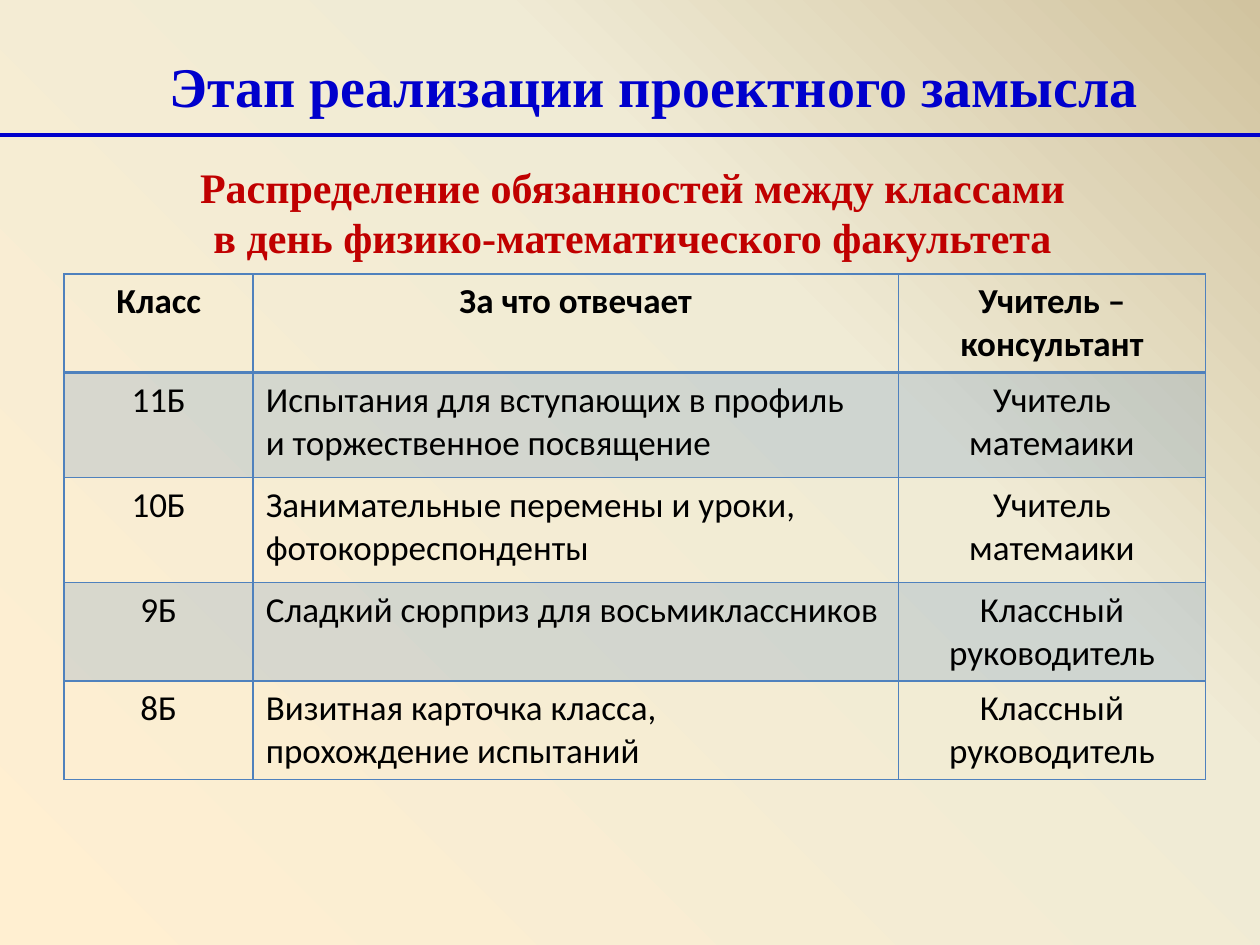
from dataclasses import dataclass

from lxml import etree
from pptx import Presentation
from pptx.dml.color import RGBColor
from pptx.enum.shapes import MSO_CONNECTOR
from pptx.enum.text import MSO_ANCHOR, MSO_AUTO_SIZE, PP_ALIGN
from pptx.oxml import parse_xml
from pptx.oxml.ns import nsdecls, qn
from pptx.util import Pt

CENTER, LEFT = PP_ALIGN.CENTER, PP_ALIGN.LEFT
STRAIGHT = MSO_CONNECTOR.STRAIGHT
TOP = MSO_ANCHOR.TOP
FIXED, GROW = MSO_AUTO_SIZE.NONE, MSO_AUTO_SIZE.SHAPE_TO_FIT_TEXT
TITLE_ONLY = 5


@dataclass(frozen=True)
class Theme:
    title: str = "0000CC"
    subtitle: str = "C00000"
    text: str = "000000"
    grid: str = "4F81BD"
    band_opacity: int = 20
    backdrop: tuple = ((0, "FFEFD1"), (65, "F0EBD5"), (100, "D1C39F"))
    heading_font: str = "Times New Roman"
    table_font: str = "Calibri"
    title_size: int = 32
    subtitle_size: int = 24
    table_size: int = 20


THEME = Theme()

TITLE = "Этап реализации проектного замысла"
SUBTITLE = ("Распределение обязанностей между классами",
            "в день физико-математического факультета")
DUTIES = (
    ("Класс", "За что отвечает", "Учитель –\nконсультант"),
    ("11Б", "Испытания для вступающих в профиль\nи торжественное посвящение",
     "Учитель матемаики"),
    ("10Б", "Занимательные перемены и уроки,\nфотокорреспонденты",
     "Учитель матемаики"),
    ("9Б", "Сладкий сюрприз для восьмиклассников", "Классный руководитель"),
    ("8Б", "Визитная карточка класса,\nпрохождение испытаний",
     "Классный руководитель"),
)
COLUMN_WIDTHS = (108, 368.6, 175.7)
ROW_HEIGHTS = (56, 60, 60, 56, 56)


def paint_backdrop(page):
    """Radial gradient that spreads from the bottom left corner."""
    stops = "".join(
        f'<a:gs pos="{position * 1000}"><a:srgbClr val="{color}"/></a:gs>'
        for position, color in THEME.backdrop)
    page.element.cSld.insert(0, parse_xml(
        f'<p:bg {nsdecls("p", "a")}><p:bgPr><a:gradFill rotWithShape="1">'
        f'<a:gsLst>{stops}</a:gsLst><a:path path="circle">'
        '<a:fillToRect t="100000" r="100000"/></a:path></a:gradFill>'
        '<a:effectLst/></p:bgPr></p:bg>'))


def write_text(frame, lines, align, color, **font_format):
    frame.text = "\n".join(lines)
    for para in frame.paragraphs:
        para.alignment = align
        for span in para.runs:
            span.font.color.rgb = RGBColor.from_string(color)
            for name, value in font_format.items():
                setattr(span.font, name, value)


def format_frame(frame, **frame_format):
    for name, value in frame_format.items():
        setattr(frame, name, value)


def place_title(page):
    box = page.shapes.title
    box.left, box.top, box.width, box.height = Pt(28), Pt(26), Pt(692), Pt(124)
    format_frame(box.text_frame, vertical_anchor=TOP, auto_size=FIXED, word_wrap=True)
    write_text(box.text_frame, [TITLE], CENTER, THEME.title, bold=True,
               name=THEME.heading_font, size=Pt(THEME.title_size))


def add_subtitle(page):
    box = page.shapes.add_textbox(Pt(101.5), Pt(88.5), Pt(520), Pt(65.5))
    format_frame(box.text_frame, auto_size=GROW, word_wrap=False)
    write_text(box.text_frame, SUBTITLE, CENTER, THEME.subtitle, bold=True,
               name=THEME.heading_font, size=Pt(THEME.subtitle_size))


def add_rule(page, y, width):
    rule = page.shapes.add_connector(STRAIGHT, 0, y, width, y)
    rule.line.color.rgb = RGBColor.from_string(THEME.title)
    rule.line.width = Pt(2.25)
    etree.SubElement(rule._element.spPr, qn("a:effectLst"))


def set_borders(cell, **widths):
    properties = cell._tc.get_or_add_tcPr()
    for side in "LRTB":
        properties.append(parse_xml(
            f'<a:ln{side} {nsdecls("a")} w="{Pt(widths.get(side, 1))}">'
            f'<a:solidFill><a:srgbClr val="{THEME.grid}"/></a:solidFill></a:ln{side}>'))


def fill_cell(cell, banded):
    if not banded:
        cell.fill.background()
        return
    cell.fill.solid()
    cell.fill.fore_color.rgb = RGBColor.from_string(THEME.grid)
    color = cell._tc.tcPr.find(f"{qn('a:solidFill')}/{qn('a:srgbClr')}")
    etree.SubElement(color, qn("a:alpha"), val=str(THEME.band_opacity * 1000))


def add_duties_table(page):
    table = page.shapes.add_table(
        len(DUTIES), len(COLUMN_WIDTHS), Pt(36.7), Pt(156.7),
        Pt(sum(COLUMN_WIDTHS)), Pt(sum(ROW_HEIGHTS))).table
    table.horz_banding = False
    for column, width in zip(table.columns, COLUMN_WIDTHS):
        column.width = Pt(width)
    for row, height in zip(table.rows, ROW_HEIGHTS):
        row.height = Pt(height)

    for row_index, texts in enumerate(DUTIES):
        header = row_index == 0
        # The line under the header is thicker than the rest of the grid
        heavy = {0: {"B": 2}, 1: {"T": 2}}.get(row_index, {})
        for column_index, text in enumerate(texts):
            cell = table.cell(row_index, column_index)
            align = LEFT if column_index == 1 and not header else CENTER
            write_text(cell.text_frame, text.split("\n"), align, THEME.text,
                       bold=header, name=THEME.table_font, size=Pt(THEME.table_size))
            set_borders(cell, **heavy)
            fill_cell(cell, banded=row_index % 2 == 1)


def main():
    deck = Presentation()
    deck.slide_width, deck.slide_height = Pt(720), Pt(540)
    page = deck.slides.add_slide(deck.slide_layouts[TITLE_ONLY])

    # Backdrop
    paint_backdrop(page)
    # Table of duties with its heading
    add_duties_table(page)
    add_subtitle(page)
    # Slide title and the line under it
    place_title(page)
    add_rule(page, Pt(77), deck.slide_width)

    deck.save("out.pptx")


if __name__ == "__main__":
    main()
